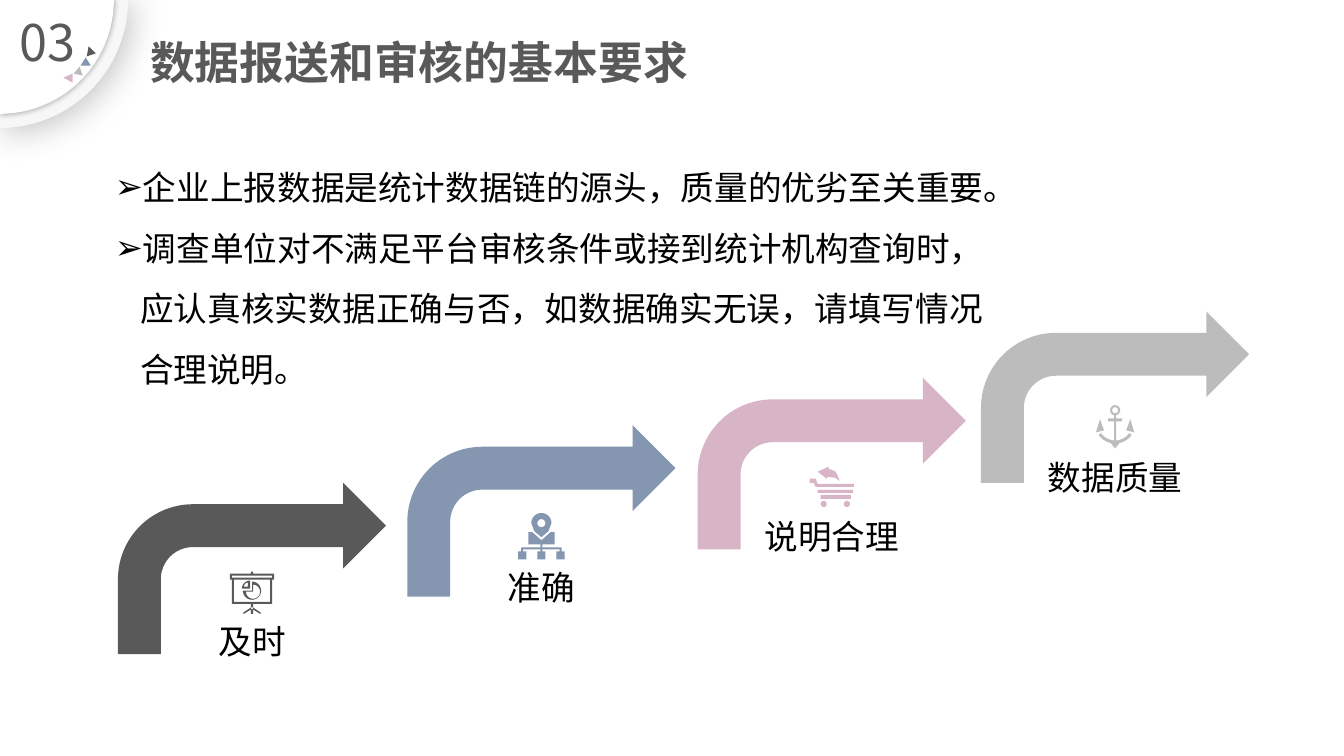
from dataclasses import dataclass
from math import cos, radians, sin

from lxml.etree import SubElement
from pptx import Presentation
from pptx.dml.color import RGBColor
from pptx.enum.shapes import MSO_SHAPE
from pptx.enum.text import MSO_ANCHOR, MSO_AUTO_SIZE, PP_ALIGN
from pptx.oxml.ns import qn
from pptx.util import Inches, Pt

Point = tuple[float, float]
Contour = list[Point]

DARK, BLUE, PINK, GRAY = "595959", "8496B0", "D7B5C6", "BCBCBC"
CJK = "Noto Sans CJK SC"


@dataclass
class Step:
    label: str
    color: str
    x: float
    y: float
    label_dy: float
    icon: list[Contour]


def rect(x: float, y: float, w: float, h: float) -> Contour:
    return [(x, y), (x + w, y), (x + w, y + h), (x, y + h)]


def arc(cx: float, cy: float, radius: float, start: float = 0, end: float = 360) -> Contour:
    """Points along an arc, with angles in degrees clockwise from the right."""
    n = 32
    angles = [radians(start + (end - start) * i / n) for i in range(n + 1)]
    return [(cx + radius * cos(a), cy + radius * sin(a)) for a in angles]


def sector(cx: float, cy: float, radius: float, start: float, end: float) -> Contour:
    return [(cx, cy)] + arc(cx, cy, radius, start, end)


def mirror(contour: Contour) -> Contour:
    return [(-x, y) for x, y in contour]


# Icon points are measured from the middle of the icon's top edge.
BOARD_LEG = [(0, 0.35), (0.09, 0.41), (0.08, 0.42), (0, 0.37)]
BOARD = [
    rect(-0.01, 0, 0.02, 0.02),
    rect(-0.22, 0.02, 0.44, 0.06), rect(-0.2, 0.04, 0.4, 0.02),
    rect(-0.2, 0.08, 0.4, 0.24), rect(-0.18, 0.08, 0.36, 0.22),
    sector(0, 0.19, 0.09, -90, 180), sector(0.01, 0.2, 0.07, -90, 180),
    sector(-0.02, 0.17, 0.08, 180, 270), sector(-0.04, 0.15, 0.04, 180, 270),
    rect(-0.01, 0.32, 0.02, 0.1),
    BOARD_LEG, mirror(BOARD_LEG),
]
PIN_MAP = [
    arc(0, 0.09, 0.1, 180, 360) + [(0.07, 0.17), (0, 0.23), (-0.07, 0.17)],
    arc(0, 0.09, 0.04),
    [(-0.13, 0.18), (-0.09, 0.18), (0, 0.26), (0.09, 0.18),
     (0.13, 0.18), (0.13, 0.3), (-0.13, 0.3)],
    rect(-0.01, 0.3, 0.02, 0.03), rect(-0.2, 0.33, 0.4, 0.02),
    *[rect(x - 0.01, 0.35, 0.02, 0.02) for x in (-0.19, 0, 0.19)],
    *[rect(x - 0.04, 0.37, 0.08, 0.08) for x in (-0.19, 0, 0.19)],
]
CART = [
    arc(0.15, 0.37, 0.03), arc(-0.08, 0.37, 0.03),
    rect(-0.11, 0.28, 0.3, 0.04), rect(-0.14, 0.23, 0.35, 0.03),
    [(-0.22, 0.12), (-0.16, 0.12), (-0.14, 0.17), (0.22, 0.17),
     (0.22, 0.2), (-0.16, 0.2), (-0.18, 0.16), (-0.22, 0.16)],
    [(-0.03, 0), (-0.03, 0.02), (0.04, 0.05), (0.08, 0.14),
     (0.03, 0.11), (-0.04, 0.1), (-0.05, 0.12), (-0.14, 0.05)],
]
FLUKE = [(0.15, 0.19), (0.19, 0.32), (0.11, 0.3)]
ANCHOR = [
    arc(0, 0.1, 0.05), arc(0, 0.1, 0.03),
    rect(-0.01, 0.15, 0.02, 0.25),
    rect(-0.07, 0.18, 0.06, 0.03), rect(0.01, 0.18, 0.06, 0.03),
    arc(0, 0.23, 0.2, 35, 145) + arc(0, 0.23, 0.17, 145, 35),
    [(-0.04, 0.43), (0.04, 0.43), (0, 0.48)],
    FLUKE, mirror(FLUKE),
]

STEPS = [
    Step("数据质量", GRAY, 9.73, 3.09, 1.23, ANCHOR),
    Step("及时", DARK, 1.17, 4.79, 1.16, BOARD),
    Step("说明合理", PINK, 6.92, 3.75, 1.16, CART),
    Step("准确", BLUE, 4.04, 4.22, 1.19, PIN_MAP),
]
CORNER_TRIANGLES = [
    (DARK, [(0.95, 0.53), (0.86, 0.56), (0.88, 0.46)]),
    (BLUE, [(0.9, 0.65), (0.8, 0.65), (0.85, 0.57)]),
    (GRAY, [(0.82, 0.75), (0.73, 0.73), (0.79, 0.66)]),
    (PINK, [(0.72, 0.82), (0.63, 0.77), (0.72, 0.73)]),
]


def rgb(color: str) -> RGBColor:
    return RGBColor.from_string(color)


def paint(sp, color: str) -> None:
    sp.shadow.inherit = False
    sp.fill.solid()
    sp.fill.fore_color.rgb = rgb(color)
    sp.line.fill.background()


def add_outline(s, contours: list[Contour], color: str, dx: float = 0, dy: float = 0):
    """Draw closed contours as one shape; a contour inside another is a hole."""
    paths = [[(Inches(x + dx), Inches(y + dy)) for x, y in c] for c in contours]
    builder = s.shapes.build_freeform(*paths[0][0])
    for i, points in enumerate(paths):
        if i:
            builder.move_to(*points[0])
        builder.add_line_segments(points[1:], close=True)
    sp = builder.convert_to_shape()
    paint(sp, color)
    return sp


def add_shadow(sp, alpha: int, blur: float, dist: float, angle: int) -> None:
    effects = sp._element.spPr.find(qn("a:effectLst"))
    shadow = SubElement(effects, qn("a:outerShdw"), blurRad=str(Pt(blur)),
                        dist=str(Pt(dist)), dir=str(angle * 60000))
    clr = SubElement(shadow, qn("a:srgbClr"), val="000000")
    SubElement(clr, qn("a:alpha"), val=str(alpha * 1000))


def add_text(s, text: str, x: float, y: float, w: float, h: float, *, size: float,
             color: str = "000000", font: str = CJK, bold: bool = False,
             align=PP_ALIGN.LEFT, anchor=MSO_ANCHOR.TOP, spacing: float = 1,
             wrap: bool = True, inset: bool = True):
    tf = s.shapes.add_textbox(Inches(x), Inches(y), Inches(w), Inches(h)).text_frame
    tf.word_wrap, tf.vertical_anchor = wrap, anchor
    if not inset:
        tf.margin_left = tf.margin_right = tf.margin_top = tf.margin_bottom = 0
    for i, line in enumerate(text.split("\n")):
        p = tf.paragraphs[0] if i == 0 else tf.add_paragraph()
        p.alignment, p.line_spacing = align, spacing
        r = p.add_run()
        r.text = line
        r.font.name, r.font.size, r.font.bold = font, Pt(size), bold
        r.font.color.rgb = rgb(color)
        SubElement(r._r.get_or_add_rPr(), qn("a:ea"), typeface=font)
    return tf


def add_bullet(p, indent: float) -> None:
    pPr = p._p.get_or_add_pPr()
    pPr.set("marL", str(Inches(indent)))
    pPr.set("indent", str(-Inches(indent)))
    SubElement(pPr, qn("a:buFont"), typeface="Arial")
    SubElement(pPr, qn("a:buChar"), char="➢")


def add_corner(s) -> None:
    add_shadow(add_outline(s, [sector(0, 0, 1.27, 0, 90)], "F7F7F7"), 25, 26, 3, 45)
    add_shadow(add_outline(s, [sector(0, 0, 1.13, 0, 90)], "FFFFFF"), 40, 5, 0, 0)
    for color, triangle in CORNER_TRIANGLES:
        add_outline(s, [triangle], color)
    add_text(s, "03", 0.04, 0.06, 0.87, 0.71, size=36, color=DARK, align=PP_ALIGN.CENTER)


def add_step(s, step: Step) -> None:
    arrow = s.shapes.add_shape(MSO_SHAPE.BENT_ARROW, Inches(step.x), Inches(step.y),
                               Inches(2.66), Inches(1.7))
    paint(arrow, step.color)
    add_outline(s, step.icon, step.color, step.x + 1.33, step.y + 0.88)
    add_text(s, step.label, step.x + 0.47, step.y + step.label_dy, 1.72, 0.82, size=24,
             font="Arial", align=PP_ALIGN.CENTER, anchor=MSO_ANCHOR.MIDDLE,
             wrap=False, inset=False)


def main() -> None:
    prs = Presentation()
    prs.slide_width, prs.slide_height = Inches(13.33), Inches(7.5)
    s = prs.slides.add_slide(prs.slide_layouts[6])
    add_corner(s)
    add_text(s, "数据报送和审核的基本要求", 1.39, 0.41, 11.26, 0.52, size=32, color=DARK,
             bold=True, anchor=MSO_ANCHOR.BOTTOM, spacing=0.9)
    for step in STEPS:
        add_step(s, step)
    tf = add_text(
        s, "企业上报数据是统计数据链的源头，质量的优劣至关重要。\n"
        "调查单位对不满足平台审核条件或接到统计机构查询时，应认真核实数据正确与否，"
        "如数据确实无误，请填写情况合理说明。",
        1.04, 1.41, 8.81, 2.44, size=24, align=PP_ALIGN.JUSTIFY, spacing=1.5)
    tf.auto_size = MSO_AUTO_SIZE.SHAPE_TO_FIT_TEXT
    for p, indent in zip(tf.paragraphs, (0, 0.25)):
        add_bullet(p, indent)
    prs.save("out.pptx")


if __name__ == "__main__":
    main()
